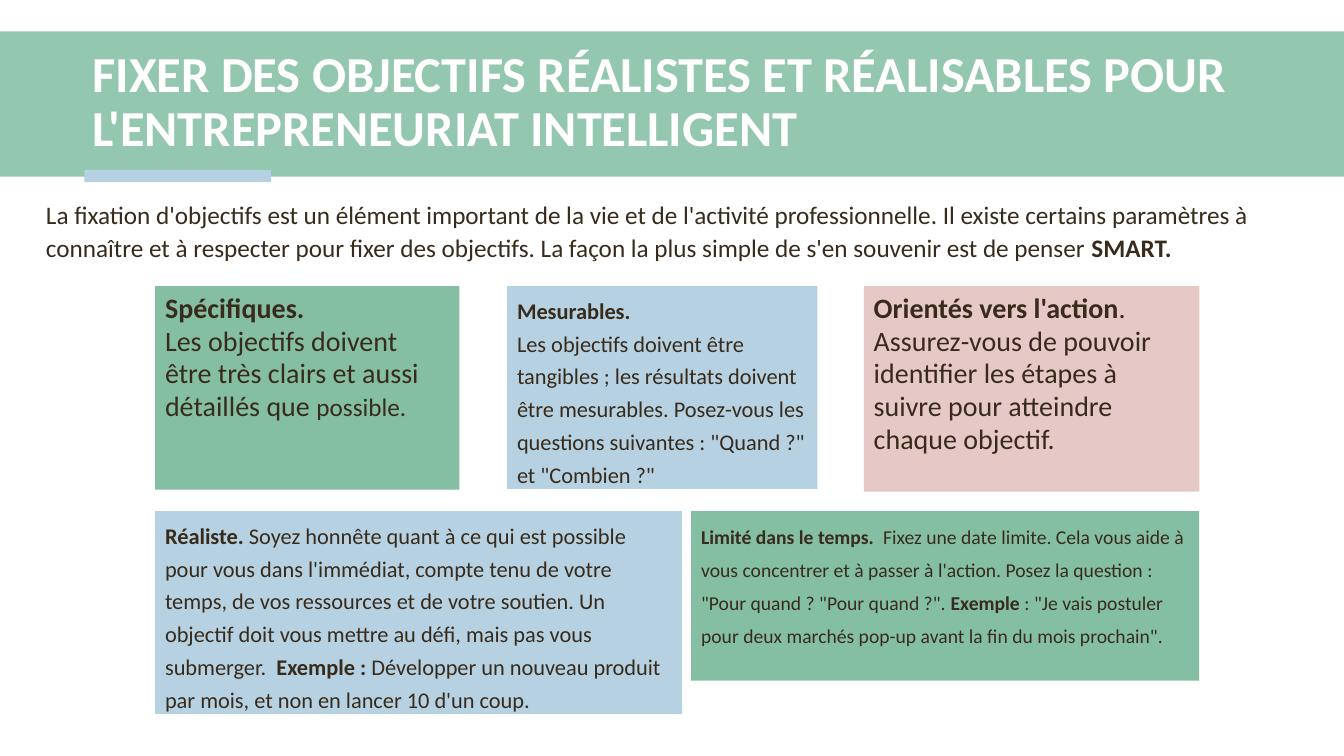
import pptx
import pptx.dml.color
import pptx.enum.shapes
import pptx.enum.text
import pptx.util
from pptx.util import Cm

GREEN, BLUE, PINK = "84BFA4", "B6D1E1", "E6C8C7"
BAND, INK, WHITE = "94C7B0", "382B1B", "FFFFFF"
LINE = pptx.util.Pt(23.4)
TOP_ROW, BOTTOM_ROW = 7.21, 12.88

TITLE = "FIXER DES OBJECTIFS RÉALISTES ET RÉALISABLES POUR L'ENTREPRENEURIAT INTELLIGENT"
INTRO = [[
    ("La fixation d'objectifs est un élément important de la vie et de l'activité "
     "professionnelle. Il existe certains paramètres à connaître et à respecter pour fixer "
     "des objectifs. La façon la plus simple de s'en souvenir est de penser ", False),
    ("SMART.", True),
]]
GOALS = [
    ((3.91, TOP_ROW, 7.67, 5.13), GREEN, 20, [
        [("Spécifiques.", True)],
        [("Les objectifs doivent être très clairs et aussi détaillés que ", False),
         ("possible.", False, 18)],
    ]),
    ((12.78, TOP_ROW, 7.82, 5.11), BLUE, 16, [
        [("Mesurables.", True)],
        [("Les objectifs doivent être tangibles ; les résultats doivent être mesurables. "
          "Posez-vous les questions suivantes : \"Quand ?\" et \"Combien ?\"", False)],
    ]),
    ((21.77, TOP_ROW, 8.46, 5.18), PINK, 20, [
        [("Orientés vers l'action", True), (".", False)],
        [("Assurez-vous de pouvoir identifier les étapes à suivre pour atteindre chaque "
          "objectif.", False)],
    ]),
    ((3.91, BOTTOM_ROW, 13.28, 5.11), BLUE, 16, [[
        ("Réaliste. ", True),
        ("Soyez honnête quant à ce qui est possible pour vous dans l'immédiat, compte tenu de "
         "votre temps, de vos ressources et de votre soutien. Un objectif doit vous mettre au "
         "défi, mais pas vous submerger.  ", False),
        ("Exemple : ", True),
        ("Développer un nouveau produit par mois, et non en lancer 10 d'un coup.", False),
    ]]),
    ((17.42, BOTTOM_ROW, 12.8, 4.27), GREEN, 14, [[
        ("Limité dans le temps.  ", True),
        ("Fixez une date limite. Cela vous aide à vous concentrer et à passer à l'action. "
         "Posez la question : \"Pour quand ? \"Pour quand ?\". ", False),
        ("Exemple ", True),
        (": \"Je vais postuler pour deux marchés pop-up avant la fin du mois prochain\".", False),
    ]]),
]


def colour(value):
    """Return the colour for a hex string."""
    return pptx.dml.color.RGBColor.from_string(value)


def set_values(target, values):
    """Set each attribute of the target from a dict."""
    for name, value in values.items():
        setattr(target, name, value)


def write_text(frame, paragraphs, size, ink=INK, anchor="TOP", spacing=LINE, before=0):
    """Fill a text frame with paragraphs of (text, bold[, size]) spans."""
    set_values(frame, {
        "word_wrap": True,
        "auto_size": pptx.enum.text.MSO_AUTO_SIZE.NONE,
        "vertical_anchor": pptx.enum.text.MSO_ANCHOR[anchor],
    })
    for index, spans in enumerate(paragraphs):
        para = frame.add_paragraph() if index else frame.paragraphs[0]
        set_values(para, {
            "alignment": pptx.enum.text.PP_ALIGN.LEFT,
            "line_spacing": spacing,
            "space_before": pptx.util.Pt(before),
        })
        for text, bold, *own_size in spans:
            span = para.add_run()
            span.text = text
            points = own_size[0] if own_size else size
            set_values(span.font, {"name": "Calibri", "size": pptx.util.Pt(points), "bold": bold})
            span.font.color.rgb = colour(ink)


def add_box(page, place, fill):
    """Add a plain filled rectangle without outline."""
    box = page.shapes.add_shape(pptx.enum.shapes.MSO_SHAPE.RECTANGLE, *map(Cm, place))
    box.shadow.inherit = False
    box.fill.solid()
    box.fill.fore_color.rgb = colour(fill)
    box.line.fill.background()
    return box


def add_title(page):
    """Place the title placeholder in front of the band and fill it."""
    title = page.shapes.title
    title.element.getparent().append(title.element)
    set_values(title, {
        "left": Cm(2.08), "top": Cm(1.04), "width": Cm(31.17), "height": Cm(3.12),
    })
    write_text(title.text_frame, [[(TITLE, True)]], 36, WHITE, "MIDDLE", 0.9, 10)


def main():
    """Build the slide and save it."""
    deck = pptx.Presentation()
    set_values(deck, {"slide_width": Cm(33.87), "slide_height": Cm(19.05)})
    page = deck.slides.add_slide(deck.slide_layouts.get_by_name("Title Only"))
    add_box(page, (0, 0.79, 33.87, 3.66), BAND)
    add_box(page, (2.13, 4.29, 4.7, 0.3), BLUE)
    add_title(page)
    intro = page.shapes.add_textbox(Cm(0.91), Cm(4.83), Cm(32.16), Cm(9.96))
    write_text(intro.text_frame, INTRO, 18)
    for place, fill, size, paragraphs in GOALS:
        write_text(add_box(page, place, fill).text_frame, paragraphs, size)
    deck.save("out.pptx")


if __name__ == "__main__":
    main()
